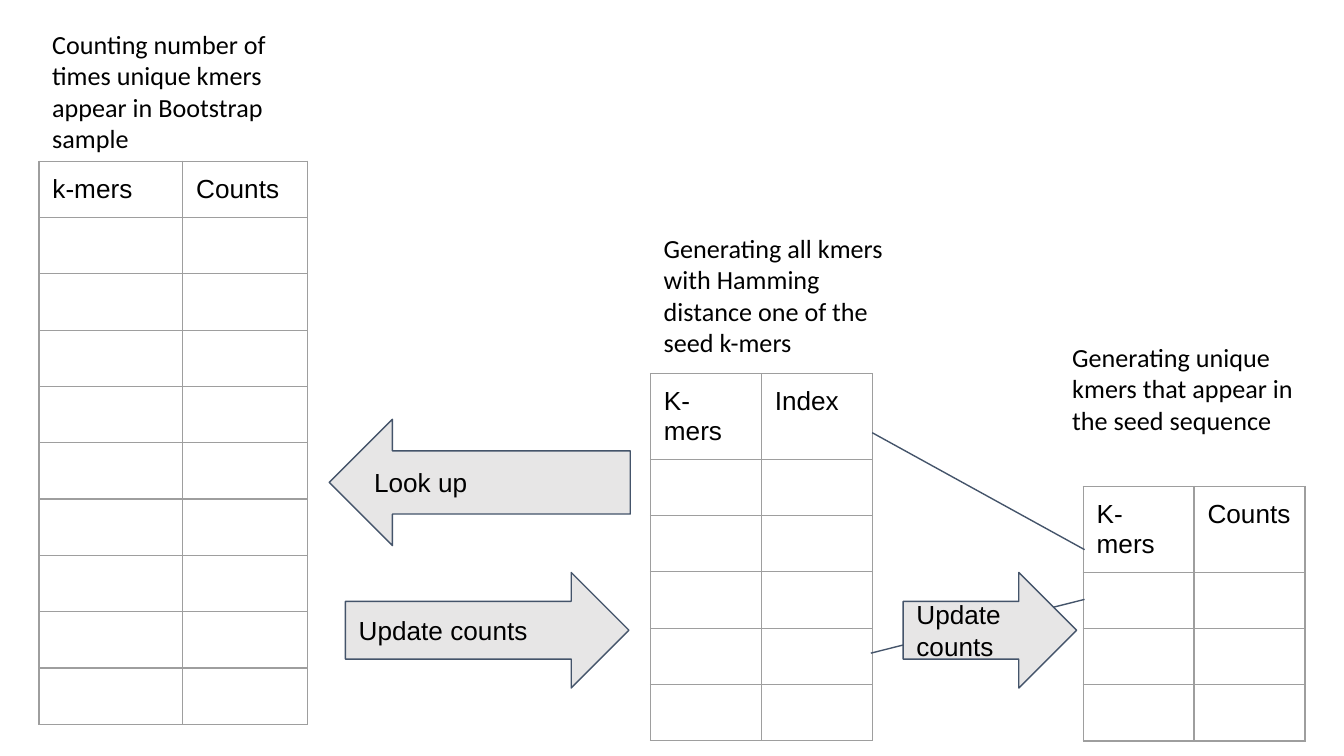
"""Build the slide on counting k-mers with three linked tables."""
from lxml import etree
from pptx import Presentation
from pptx.dml.color import RGBColor
from pptx.enum.shapes import MSO_CONNECTOR, MSO_SHAPE
from pptx.enum.text import MSO_ANCHOR, PP_ALIGN
from pptx.oxml.ns import qn
from pptx.util import Inches, Pt

LEFT_ARROW, RIGHT_ARROW = MSO_SHAPE.LEFT_ARROW, MSO_SHAPE.RIGHT_ARROW
STRAIGHT = MSO_CONNECTOR.STRAIGHT
TOP, MIDDLE, LEFT = MSO_ANCHOR.TOP, MSO_ANCHOR.MIDDLE, PP_ALIGN.LEFT
BLACK, BORDER, SLATE, PALE = "000000", "9E9E9E", "44546A", "E7E6E6"
TEXT_SIZE = Pt(14)
LINE_WIDTH = Pt(0.75)

deck = Presentation()
deck.slide_width, deck.slide_height = Inches(10), Inches(5.625)
UNIT = deck.slide_width / 100
PADDING = int(UNIT)
ROW_HEIGHT = 4.18
slide = deck.slides.add_slide(deck.slide_layouts[6])
shapes = slide.shapes


def grid(*steps):
    """Turn grid steps into lengths."""
    return [int(step * UNIT) for step in steps]


def write(frame, text, font="Arial", anchor=TOP):
    """Fill a text frame with one formatted paragraph."""
    frame.word_wrap = True
    frame.vertical_anchor = anchor
    frame.margin_left = frame.margin_right = PADDING
    frame.margin_top = frame.margin_bottom = PADDING
    paragraph = frame.paragraphs[0]
    paragraph.alignment = LEFT
    run = paragraph.add_run()
    run.text = text
    run.font.name, run.font.size, run.font.bold = font, TEXT_SIZE, False
    run.font.color.rgb = RGBColor.from_string(BLACK)


for left, top, widths, headings, row_count in (
    (2.9, 12, (10.7, 9.3), ("k-mers", "Counts"), 10),
    (80.6, 36.2, (8.25, 8.25), ("K-mers", "Counts"), 4),
    (48.4, 27.8, (8.25, 8.25), ("K-mers", "Index"), 6),
):
    table = shapes.add_table(
        row_count, len(widths),
        *grid(left, top, sum(widths), row_count * ROW_HEIGHT)).table
    table.first_row = table.horz_banding = False
    for column, width in zip(table.columns, grid(*widths)):
        column.width = width
    for row in table.rows:
        row.height = grid(ROW_HEIGHT)[0]
    for cell in table.iter_cells():
        cell.margin_left = cell.margin_right = PADDING
        cell.margin_top = cell.margin_bottom = PADDING
        cell.fill.background()
        properties = cell._tc.get_or_add_tcPr()
        for position, side in enumerate(("lnL", "lnR", "lnT", "lnB")):
            edge = etree.Element(qn(f"a:{side}"), w=str(LINE_WIDTH))
            paint = etree.SubElement(edge, qn("a:solidFill"))
            etree.SubElement(paint, qn("a:srgbClr"), val=BORDER)
            properties.insert(position, edge)
        ending = cell.text_frame.paragraphs[0]._p.get_or_add_endParaRPr()
        ending.set("sz", str(int(TEXT_SIZE.pt * 100)))
        etree.SubElement(ending, qn("a:latin"), typeface="Arial")
    for index, heading in enumerate(headings):
        write(table.cell(0, index).text_frame, heading)

for left, top, caption in (
    (2.9, 1.1, "Counting number of times unique kmers appear in Bootstrap sample"),
    (78.8, 24.4, "Generating unique kmers that appear in the seed sequence"),
    (48.4, 16.3, "Generating all kmers with Hamming distance one of the seed k-mers"),
):
    caption_box = shapes.add_textbox(*grid(left, top, 20, 10.3))
    write(caption_box.text_frame, caption, font="Calibri")

for ends in ((64.9, 32.2, 80.7, 40.9), (64.8, 48.6, 80.7, 44.6)):
    link = shapes.add_connector(STRAIGHT, *grid(*ends))
    link.line.color.rgb = RGBColor.from_string(SLATE)
    link.line.width = LINE_WIDTH
    etree.SubElement(link._element.spPr, qn("a:effectLst"))

for direction, bounds, action in (
    (LEFT_ARROW, (24.5, 31.2, 22.4, 9.4), "Look up"),
    (RIGHT_ARROW, (25.7, 42.6, 21.1, 8.6), "Update counts"),
    (RIGHT_ARROW, (67.2, 42.6, 12.9, 8.6), "Update counts"),
):
    arrow = shapes.add_shape(direction, *grid(*bounds))
    arrow.shadow.inherit = False
    arrow.fill.solid()
    arrow.fill.fore_color.rgb = RGBColor.from_string(PALE)
    arrow.line.color.rgb = RGBColor.from_string(SLATE)
    arrow.line.width = LINE_WIDTH
    write(arrow.text_frame, action, anchor=MIDDLE)

deck.save("out.pptx")
